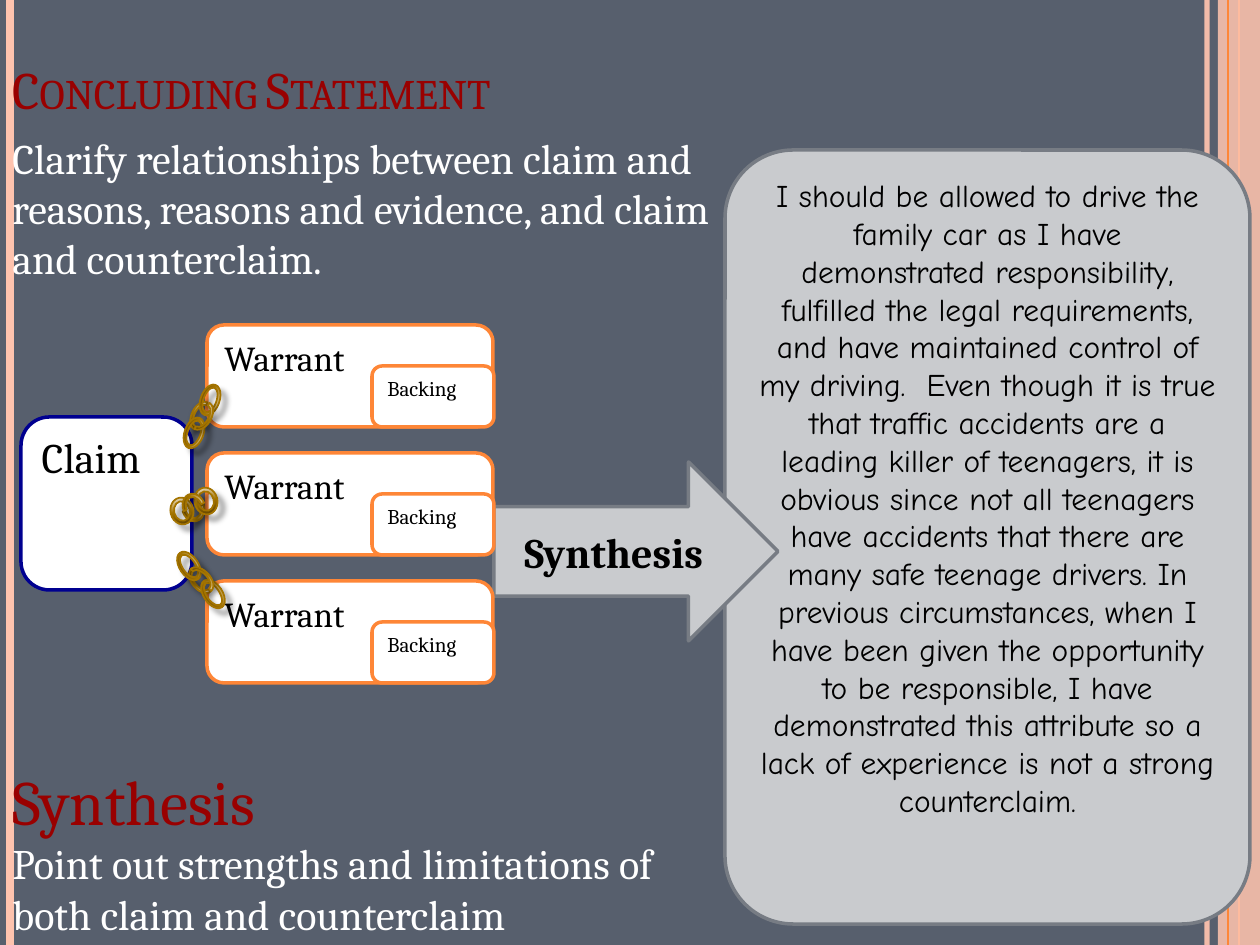
"""Build the Concluding Statement slide with its claim, warrant and synthesis diagram."""
from lxml import etree
from pptx import Presentation
from pptx.dml.color import RGBColor
from pptx.enum.shapes import MSO_CONNECTOR, MSO_SHAPE
from pptx.enum.text import MSO_ANCHOR, PP_ALIGN
from pptx.oxml import parse_xml
from pptx.oxml.ns import nsdecls, qn
from pptx.util import Pt

PX = 914400 / 126
NS = nsdecls("a")
hue = RGBColor.from_string

deck = Presentation()
deck.slide_width, deck.slide_height = int(1260 * PX), int(945 * PX)
slide = deck.slides.add_slide(deck.slide_layouts[6])
slide.background.fill.solid()
slide.background.fill.fore_color.rgb = hue("575F6D")


def draw(kind, area, fill=None, line=None, width=2):
    place = [int(n * PX) for n in area]
    if kind is None:
        shape = slide.shapes.add_textbox(*place)
    else:
        shape = slide.shapes.add_shape(kind, *place)
        shape.shadow.inherit = False
        if fill:
            shape.fill.solid()
            shape.fill.fore_color.rgb = hue(fill)
        if line:
            shape.line.color.rgb = hue(line)
            shape.line.width = Pt(width)
        else:
            shape.line.fill.background()
    shape.text_frame.word_wrap = True
    shape.text_frame.vertical_anchor = MSO_ANCHOR.TOP
    return shape


def write(para, text, size, color="000000", font="Cambria", align=PP_ALIGN.LEFT):
    para.alignment = align
    run = para.add_run()
    run.text = text
    run.font.size = Pt(size)
    run.font.name = font
    run.font.color.rgb = hue(color)
    return run


rules = [(1207, "FEC3AE", 3, 93), (10, "FEC3AE", 4.5, 100),
         (1239, "FE8637", 1.5, 100), (1228, "FE8637", 0.75, 100)]
for x, color, width, alpha in rules:
    if x == 1228:
        strip = draw(MSO_SHAPE.RECTANGLE, (1218, 0, 42, 945), "FEC3AE")
        tint = strip.fill._xPr.find(".//" + qn("a:srgbClr"))
        etree.SubElement(tint, qn("a:alpha"), val="87000")
    rule = slide.shapes.add_connector(
        MSO_CONNECTOR.STRAIGHT, int(x * PX), 0, int(x * PX), int(945 * PX))
    rule.line.color.rgb = hue(color)
    rule.line.width = Pt(width)
    if alpha < 100:
        tint = rule.line._ln.find(".//" + qn("a:srgbClr"))
        etree.SubElement(tint, qn("a:alpha"), val=str(alpha * 1000))
    etree.SubElement(rule._element.spPr, qn("a:effectLst"))

title = draw(None, (0, 32, 1134, 94)).text_frame
title.vertical_anchor = MSO_ANCHOR.BOTTOM
run = write(title.paragraphs[0], "Concluding Statement", 30, "990000")
run._r.get_or_add_rPr().set("cap", "small")

notes = draw(None, (0, 756, 714, 189)).text_frame
write(notes.paragraphs[0], "Synthesis", 36, "990000")
write(notes.add_paragraph(),
      "Point out strengths and limitations of both claim and counterclaim", 24, "FFFFFF")

panel = draw(MSO_SHAPE.ROUNDED_RECTANGLE, (725, 150, 525, 774), "C9CBCE", "777C84")
panel.adjustments[0] = 0.13
write(panel.text_frame.paragraphs[0],
      "I should be allowed to drive the family car as I have demonstrated "
      "responsibility, fulfilled the legal requirements, and have maintained "
      "control of my driving.  Even though it is true that traffic accidents are "
      "a leading killer of teenagers, it is obvious since not all teenagers have "
      "accidents that there are many safe teenage drivers. In previous "
      "circumstances, when I have been given the opportunity to be responsible, "
      "I have demonstrated this attribute so a lack of experience is not a "
      "strong counterclaim.", 18, font="Comic Neue", align=PP_ALIGN.CENTER)

arrow = draw(MSO_SHAPE.RIGHT_ARROW, (494, 462, 284, 179), "C9CBCE", "777C84")
arrow.text_frame.word_wrap = False
arrow.text_frame.vertical_anchor = MSO_ANCHOR.MIDDLE
run = write(arrow.text_frame.paragraphs[0], "Synthesis", 24, align=PP_ALIGN.CENTER)
run.font.bold = True

lead = draw(None, (0, 126, 766, 242)).text_frame.paragraphs[0]
lead.space_before = Pt(6)
write(lead, "Clarify relationships between claim and reasons, reasons and "
      "evidence, and claim and counterclaim.", 24, "FFFFFF")

cards = [("Claim", 24, (21, 417, 171, 173), "000090")]
for row in range(3):
    y = 325 + 128 * row
    cards += [("Warrant", 20, (207, y, 286, 102), "FE8637"),
              ("Backing", 12, (372, y + 41, 122, 61), "FE8637")]
for text, size, area, line in cards:
    card = draw(MSO_SHAPE.ROUNDED_RECTANGLE, area, "FFFFFF", line)
    write(card.text_frame.paragraphs[0], text, size)

ARC, RING = MSO_SHAPE.BLOCK_ARC, MSO_SHAPE.DONUT
links = [
    (ARC, 201, 580, 30, 19, 231, "H"), (RING, 189, 566, 19, 32, 326, ""),
    (RING, 213, 594, 19, 32, 326, ""), (ARC, 201, 580, 30, 19, 47, ""),
    (ARC, 201, 416, 30, 19, 115, "HV"), (RING, 194, 433, 19, 32, 20, "V"),
    (RING, 210, 400, 19, 32, 20, "V"), (ARC, 202, 416, 30, 19, 300, "V"),
    (ARC, 193, 508, 22, 27, 162, "H"), (RING, 182, 511, 27, 23, 257, ""),
    (RING, 206, 501, 27, 23, 257, ""), (ARC, 194, 507, 22, 27, 338, ""),
]
stops = "".join(f'<a:gs pos="{at}"><a:srgbClr val="{color}"/></a:gs>' for at, color in
                [(0, "4D3500"), (50000, "A47400"), (100000, "FFFFFF")])
for kind, x, y, w, h, turn, flip in links:
    link = draw(kind, (x - w / 2, y - h / 2, w, h), None, "A47400", 1)
    link.rotation = turn
    for n, value in enumerate([108, 0.27, 0.15] if kind == ARC else [0.16]):
        link.adjustments[n] = value
    props = link._element.spPr
    for side in flip:
        props.xfrm.set("flip" + side, "1")
    props.insert(2, parse_xml(
        f'<a:gradFill {NS}><a:gsLst>{stops}</a:gsLst><a:lin ang="0"/></a:gradFill>'))
    gap = Pt(1.8 if kind == ARC else 5)
    props.find(qn("a:effectLst")).append(parse_xml(
        f'<a:outerShdw {NS} blurRad="{Pt(3.1)}" dist="{gap}" dir="2700000">'
        '<a:srgbClr val="000000"><a:alpha val="35000"/></a:srgbClr></a:outerShdw>'))

deck.save("out.pptx")
